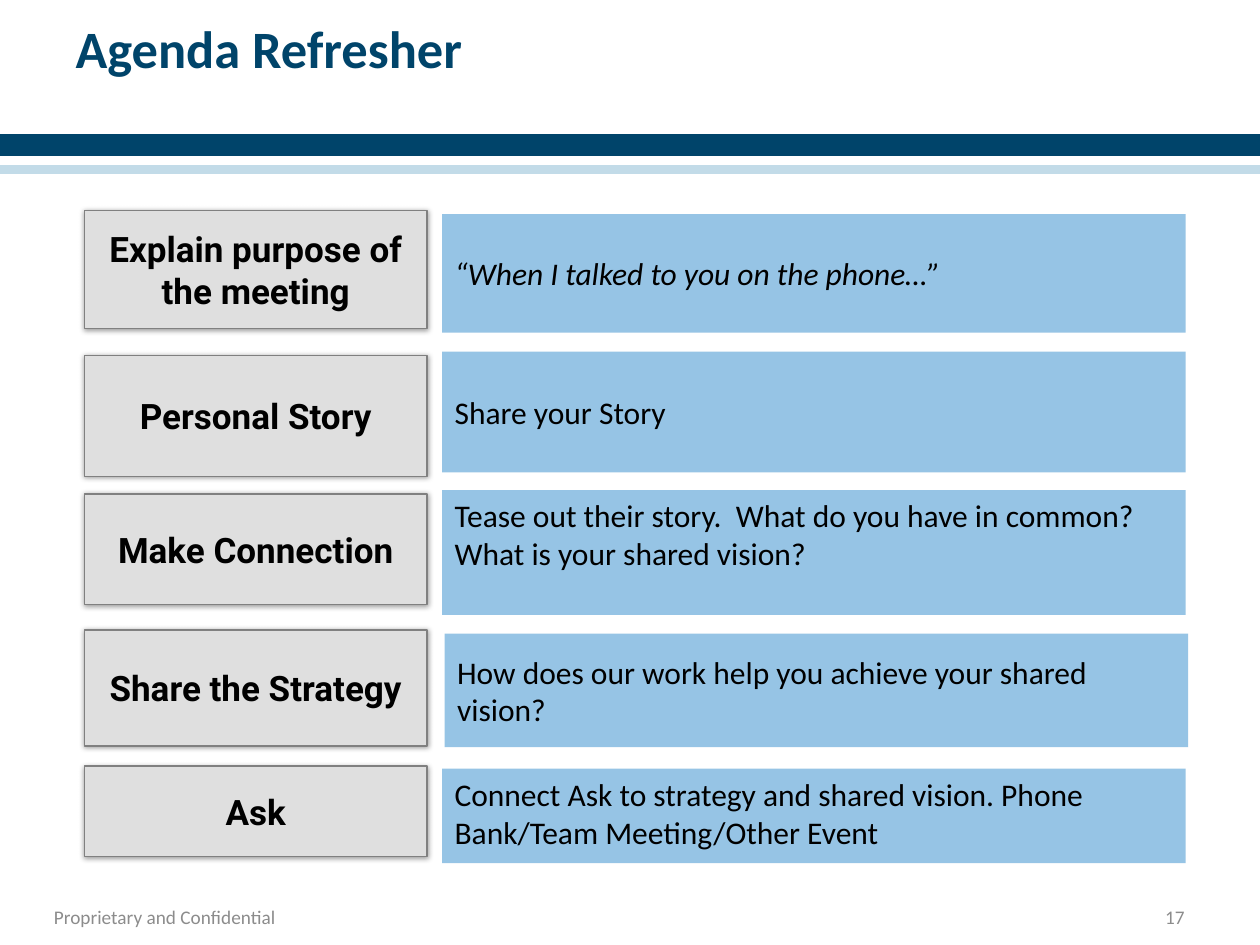
"""Build the Agenda Refresher slide: five agenda steps, each with its talking point."""
from lxml import etree
from pptx import Presentation
from pptx.dml.color import RGBColor
from pptx.enum.shapes import MSO_SHAPE
from pptx.enum.text import MSO_ANCHOR, PP_ALIGN
from pptx.oxml.ns import qn
from pptx.util import Inches, Pt

RECTANGLE = MSO_SHAPE.RECTANGLE
TOP, MIDDLE = MSO_ANCHOR.TOP, MSO_ANCHOR.MIDDLE
LEFT, CENTER, RIGHT = PP_ALIGN.LEFT, PP_ALIGN.CENTER, PP_ALIGN.RIGHT

NAVY = RGBColor(0x00, 0x44, 0x6A)
WHITE = RGBColor(0xFF, 0xFF, 0xFF)
PALE_BLUE = RGBColor(0xC2, 0xDB, 0xE8)
BLUE = RGBColor(0x00, 0x70, 0xC0)
LIGHT_GRAY = RGBColor(0xDF, 0xDF, 0xDF)
MID_GRAY = RGBColor(0x80, 0x80, 0x80)
FOOTER_GRAY = RGBColor(0x8C, 0x8C, 0x8C)
BLACK = RGBColor(0x00, 0x00, 0x00)

TITLE_FONT = {"name": "Calibri", "size": Pt(30), "bold": True}
FOOTER_FONT = {"name": "Calibri", "size": Pt(11)}
STEP_FONT = {"name": "Roboto", "size": Pt(20), "bold": True}
POINT_FONT = {"name": "Calibri", "size": Pt(18)}


def write(holder, text, font_format, color, align, anchor):
    frame = holder.text_frame
    frame.word_wrap = True
    frame.vertical_anchor = anchor
    paragraph = frame.paragraphs[0]
    paragraph.text = text
    paragraph.alignment = align
    for attribute, value in font_format.items():
        setattr(paragraph.font, attribute, value)
    paragraph.font.color.rgb = color


def add_box(left, top, width, height, fill):
    box = slide.shapes.add_shape(
        RECTANGLE, Inches(left), Inches(top), Inches(width), Inches(height))
    box.shadow.inherit = False
    box.fill.solid()
    box.fill.fore_color.rgb = fill
    return box


presentation = Presentation()
presentation.slide_width = Inches(10)
presentation.slide_height = Inches(7.5)
slide = presentation.slides.add_slide(presentation.slide_layouts[5])

title = slide.shapes.title
title.left, title.top = Inches(0.5), Inches(0.08)
title.width, title.height = Inches(9), Inches(1.25)
write(title, "Agenda Refresher", TITLE_FONT, NAVY, LEFT, TOP)

for top, height, color in [(1.08, 0.25, NAVY), (1.25, 0.05, WHITE), (1.32, 0.05, PALE_BLUE)]:
    band = add_box(0, top, 10, height, color)
    band.line.color.rgb = color
    band.line.width = Pt(2)

for left, width, text, align in [
    (0.33, 2.57, "Proprietary and Confidential", LEFT),
    (7.17, 2.33, "17", RIGHT),
]:
    footer = slide.shapes.add_textbox(Inches(left), Inches(7.1), Inches(width), Inches(0.35))
    write(footer, text, FOOTER_FONT, FOOTER_GRAY, align, MIDDLE)

agenda_steps = [
    ("Explain purpose of the meeting", 1.67, 0.94),
    ("Personal Story", 2.82, 0.96),
    ("Make Connection", 3.92, 0.88),
    ("Share the Strategy", 5, 0.92),
    ("Ask", 6.08, 0.72),
]
for text, top, height in agenda_steps:
    step = add_box(0.67, top, 2.72, height, LIGHT_GRAY)
    step.line.color.rgb = MID_GRAY
    step.line.width = Pt(0.75)
    effects = step._element.spPr.find(qn("a:effectLst"))
    shadow = etree.SubElement(effects, qn("a:outerShdw"), blurRad=str(Pt(3)),
                              dist=str(Pt(0.5)), dir="5400000", rotWithShape="0")
    shadow_color = etree.SubElement(shadow, qn("a:srgbClr"), val=str(BLACK))
    etree.SubElement(shadow_color, qn("a:alpha"), val="38000")
    write(step, text, STEP_FONT, BLACK, CENTER, MIDDLE)

talking_points = [
    ("“When I talked to you on the phone…”", 3.51, 1.7, 0.94, MIDDLE, True),
    ("Share your Story", 3.51, 2.79, 0.96, MIDDLE, False),
    ("Tease out their story.  What do you have in common?  What is your shared vision?",
     3.51, 3.89, 0.99, TOP, False),
    ("How does our work help you achieve your shared vision?", 3.53, 5.03, 0.9, MIDDLE, False),
    ("Connect Ask to strategy and shared vision. Phone Bank/Team Meeting/Other Event",
     3.51, 6.1, 0.75, TOP, False),
]
for text, left, top, height, anchor, italic in talking_points:
    point = add_box(left, top, 5.9, height, BLUE)
    point.line.fill.background()
    fill_color = point._element.spPr.find(qn("a:solidFill")).find(qn("a:srgbClr"))
    etree.SubElement(fill_color, qn("a:alpha"), val="41000")
    write(point, text, POINT_FONT | {"italic": italic}, BLACK, LEFT, anchor)

presentation.save("out.pptx")
